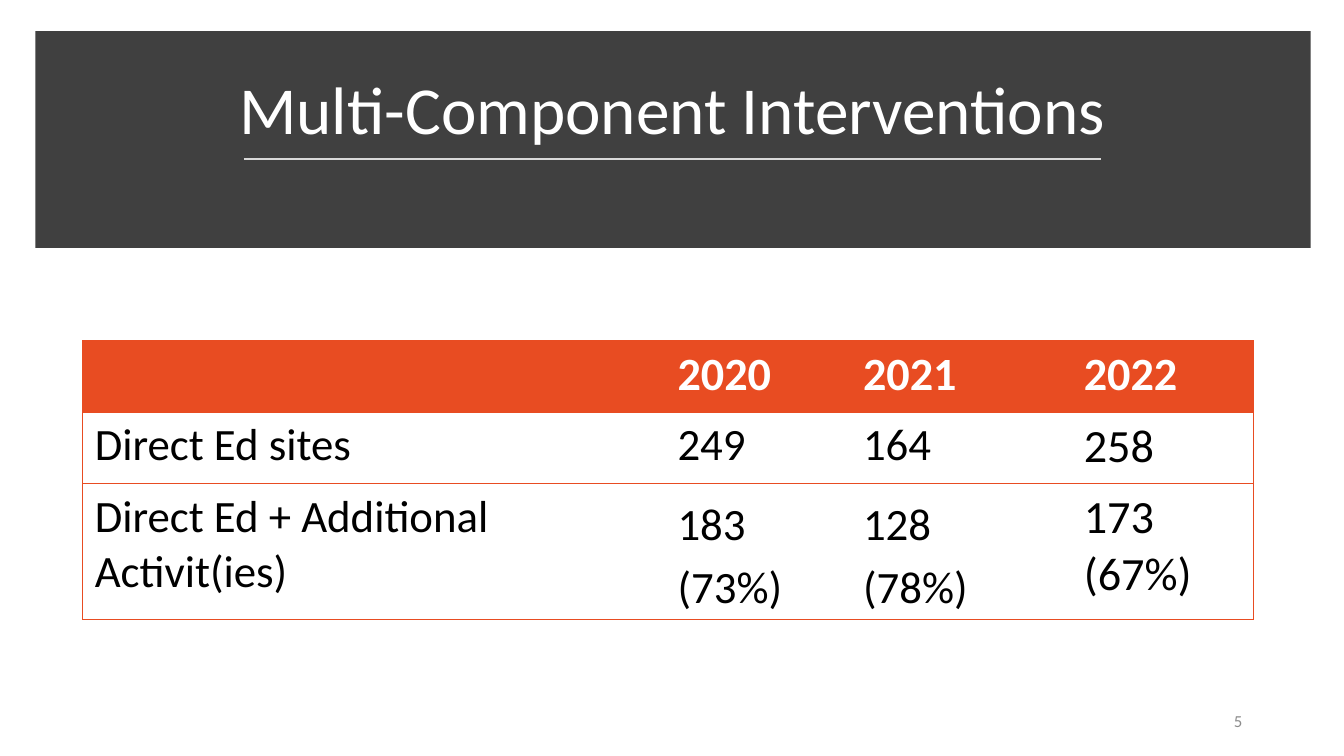
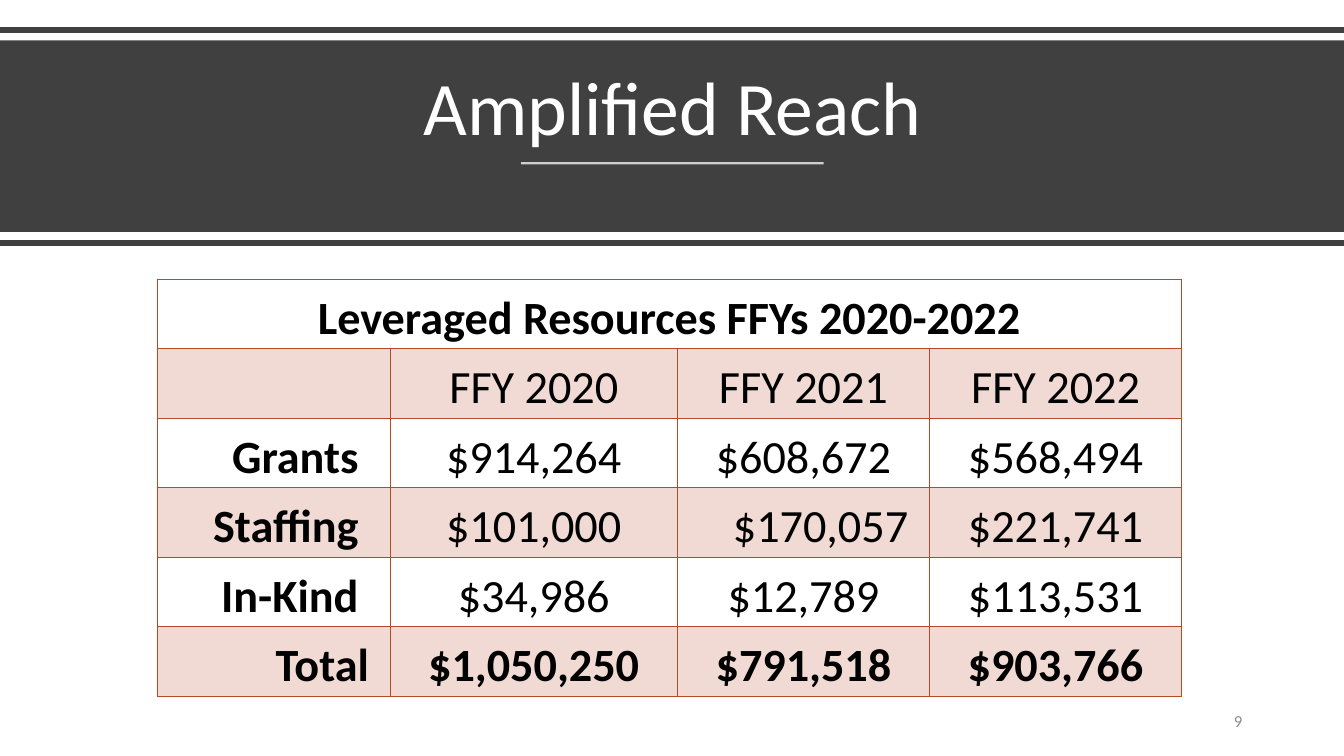
from dataclasses import dataclass

from lxml.etree import SubElement
from pptx import Presentation
from pptx.dml.color import RGBColor
from pptx.enum.shapes import MSO_CONNECTOR as Connector, MSO_SHAPE as Shape
from pptx.enum.text import MSO_ANCHOR as Anchor, MSO_AUTO_SIZE as AutoSize, PP_ALIGN as Align
from pptx.oxml.ns import qn
from pptx.slide import Slide
from pptx.table import Table, _Cell as TableCell
from pptx.util import Inches, Pt

FONT = "Calibri"
WHITE = RGBColor(0xFF, 0xFF, 0xFF)
BLACK = RGBColor(0x00, 0x00, 0x00)
CHARCOAL = RGBColor(0x40, 0x40, 0x40)
SILVER = RGBColor(0xD9, 0xD9, 0xD9)
GRAY = RGBColor(0x8C, 0x8C, 0x8C)
ORANGE = RGBColor(0xE8, 0x4C, 0x22)
RUST = RGBColor(0xB6, 0x49, 0x26)

SLIDE_WIDTH, SLIDE_HEIGHT = 13.33, 7.5
NO_GRID_STYLE = "{2D5ABB26-0587-4C30-8999-92F81FD0307C}"
TITLE_ONLY = 5


@dataclass(frozen=True)
class Rule:
    """A horizontal line."""
    left: float
    right: float
    y: float
    color: RGBColor
    points: float
    opacity: int = 100


@dataclass(frozen=True)
class Banner:
    """The dark title band with its rules."""
    title: str
    title_top: float
    title_size: int
    left: float
    top: float
    width: float
    height: float
    rules: tuple[Rule, ...]


@dataclass(frozen=True)
class Grid:
    """Place and frame of a table."""
    left: float
    top: float
    columns: tuple[float, ...]
    row_height: float
    rows: int
    border: RGBColor
    border_points: float
    inner_verticals: bool
    margin_x: float
    margin_y: float
    anchor: Anchor


@dataclass(frozen=True)
class CellText:
    text: str
    size: int = 33
    bold: bool = False
    color: RGBColor = BLACK
    align: Align = Align.LEFT
    spacing: float = 1.0


def set_opacity(fill_parent, percent: int) -> None:
    color = fill_parent.find(".//" + qn("a:srgbClr"))
    SubElement(color, qn("a:alpha"), val=str(percent * 1000))


def draw_rule(slide: Slide, rule: Rule) -> None:
    line = slide.shapes.add_connector(
        Connector.STRAIGHT, Inches(rule.left), Inches(rule.y), Inches(rule.right), Inches(rule.y))
    line.line.color.rgb = rule.color
    line.line.width = Pt(rule.points)
    properties = line._element.spPr
    if rule.opacity < 100:
        set_opacity(properties, rule.opacity)
    SubElement(properties, qn("a:effectLst"))


def style_paragraph(para, size: int, color: RGBColor, align: Align,
                    spacing: float = 1.0, bold: bool = False) -> None:
    para.alignment = align
    para.line_spacing = spacing
    for span in para.runs:
        span.font.name = FONT
        span.font.size = Pt(size)
        span.font.bold = bold
        span.font.color.rgb = color


def add_page(deck, banner: Banner, number: str) -> Slide:
    """Add a slide with banner, title, rules and page number."""
    page = deck.slides.add_slide(deck.slide_layouts[TITLE_ONLY])
    title = page.shapes.title

    # Band behind the title
    band = page.shapes.add_shape(Shape.RECTANGLE, Inches(banner.left), Inches(banner.top),
                                 Inches(banner.width), Inches(banner.height))
    band.shadow.inherit = False
    band.fill.solid()
    band.fill.fore_color.rgb = CHARCOAL
    band.line.fill.background()
    title._element.addprevious(band._element)

    # Title
    title.left, title.top = Inches(0.58), Inches(banner.title_top)
    title.width, title.height = Inches(12.18), Inches(1.02)
    frame = title.text_frame
    frame.text = banner.title
    frame.auto_size = AutoSize.NONE
    frame.vertical_anchor = Anchor.BOTTOM
    style_paragraph(frame.paragraphs[0], banner.title_size, WHITE, Align.CENTER, 0.9)

    for rule in banner.rules:
        draw_rule(page, rule)

    # Page number
    box = page.shapes.add_textbox(Inches(9.42), Inches(6.95), Inches(3), Inches(0.4))
    box.text_frame.word_wrap = True
    box.text_frame.vertical_anchor = Anchor.MIDDLE
    box.text_frame.text = number
    style_paragraph(box.text_frame.paragraphs[0], 12, GRAY, Align.RIGHT)
    return page


def set_borders(cell: TableCell, sides: str, color: RGBColor, points: float) -> None:
    """Draw the sides named by L, R, T and B, in that order."""
    properties = cell._tc.get_or_add_tcPr()
    for index, side in enumerate(sides):
        line = SubElement(properties, qn(f"a:ln{side}"), w=str(Pt(points)))
        SubElement(SubElement(line, qn("a:solidFill")), qn("a:srgbClr"), val=str(color))
        properties.insert(index, line)


def fill_cell(cell: TableCell, color: RGBColor | None, opacity: int = 100) -> None:
    if color is None:
        cell.fill.background()
        return
    cell.fill.solid()
    cell.fill.fore_color.rgb = color
    if opacity < 100:
        set_opacity(cell._tc.tcPr.find(qn("a:solidFill")), opacity)


def write_cell(cell: TableCell, content: CellText) -> None:
    if not content.text:
        return
    cell.text_frame.text = content.text
    for para in cell.text_frame.paragraphs:
        style_paragraph(para, content.size, content.color, content.align,
                        content.spacing, content.bold)


def add_grid(page: Slide, grid: Grid, contents: list[list[CellText]]) -> Table:
    """Add a framed table and write its cells."""
    frame = page.shapes.add_table(
        grid.rows, len(grid.columns), Inches(grid.left), Inches(grid.top),
        Inches(sum(grid.columns)), Inches(grid.row_height * grid.rows))
    table = frame.table
    table._tbl.tblPr.find(qn("a:tableStyleId")).text = NO_GRID_STYLE
    table.first_row = table.horz_banding = False
    for column, width in zip(table.columns, grid.columns):
        column.width = Inches(width)
    last = len(grid.columns) - 1
    for row_index, row in enumerate(contents):
        table.rows[row_index].height = Inches(grid.row_height)
        for column_index, content in enumerate(row):
            cell = table.cell(row_index, column_index)
            cell.margin_left = cell.margin_right = Inches(grid.margin_x)
            cell.margin_top = cell.margin_bottom = Inches(grid.margin_y)
            cell.vertical_anchor = grid.anchor
            left = "L" if grid.inner_verticals or column_index == 0 else ""
            right = "R" if grid.inner_verticals or column_index == last else ""
            set_borders(cell, left + right + "TB", grid.border, grid.border_points)
            write_cell(cell, content)
    return table


def build_interventions(deck) -> None:
    banner = Banner("Multi-Component Interventions", 0.51, 48, 0.35, 0.31, 12.65, 2.15,
                    (Rule(2.42, 10.92, 1.58, SILVER, 1.75),))
    page = add_page(deck, banner, "5")
    grid = Grid(0.82, 3.38, (5.78, 1.84, 2.19, 1.8), 0.71, 3, ORANGE, 0.5, False,
                0.12, 0.06, Anchor.TOP)
    contents = [
        [CellText(year, bold=True, color=WHITE) for year in ("", "2020", "2021", "2022")],
        [CellText("Direct Ed sites", 32), CellText("249", 32), CellText("164", 32),
         CellText("258")],
        [CellText("Direct Ed + Additional Activit(ies)", 32),
         CellText("183 (73%)", 32, spacing=1.15), CellText("128\n(78%)", 32, spacing=1.15),
         CellText("173 (67%)")],
    ]
    table = add_grid(page, grid, contents)
    for row_index, row in enumerate(table.rows):
        for cell in row.cells:
            fill_cell(cell, ORANGE if row_index == 0 else None)


def build_reach(deck) -> None:
    edges = tuple(Rule(0, SLIDE_WIDTH, y, CHARCOAL, 4) for y in (0.3, 2.41))
    banner = Banner("Amplified Reach", 0.54, 54, 0, 0.4, SLIDE_WIDTH, 1.9,
                    edges + (Rule(5.17, 8.17, 1.62, WHITE, 1.5, 75),))
    page = add_page(deck, banner, "9")
    grid = Grid(1.56, 2.77, (2.31, 2.85, 2.5, 2.5), 0.69, 6, RUST, 1, True,
                0.21, 0, Anchor.MIDDLE)
    rows = [
        ("Leveraged Resources FFYs 2020-2022", "", "", ""),
        ("", "FFY 2020", "FFY 2021", "FFY 2022"),
        ("Grants ", "$914,264", "$608,672", "$568,494"),
        ("Staffing ", "$101,000", "$170,057", "$221,741"),
        ("In-Kind ", "$34,986", "$12,789", "$113,531"),
        ("Total", "$1,050,250", "$791,518", "$903,766"),
    ]
    right_aligned = {"$170,057"} | {row[0] for row in rows[1:]}
    contents = [
        [CellText(text, bold=column_index == 0 or row[0] == "Total",
                  align=Align.RIGHT if text in right_aligned else Align.CENTER, spacing=1.15)
         for column_index, text in enumerate(row)]
        for row in rows
    ]
    table = add_grid(page, grid, contents)
    table.cell(0, 0).merge(table.cell(0, 3))
    for row_index, row in enumerate(table.rows):
        for cell in row.cells:
            fill_cell(cell, RUST if row_index % 2 else None, 20)


def main() -> None:
    deck = Presentation()
    deck.slide_width, deck.slide_height = Inches(SLIDE_WIDTH), Inches(SLIDE_HEIGHT)
    build_interventions(deck)
    build_reach(deck)
    deck.save("out.pptx")


if __name__ == "__main__":
    main()
